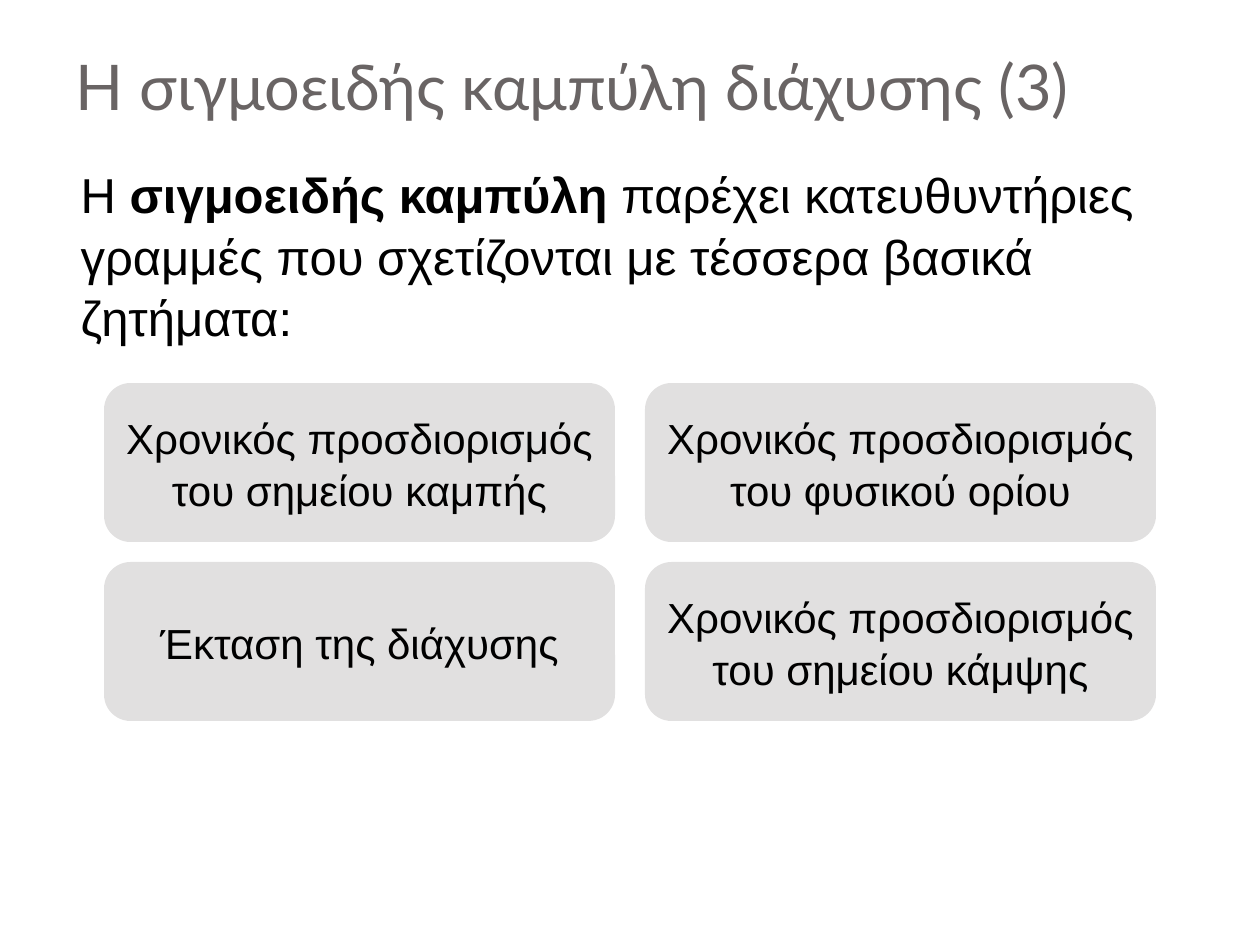
import pptx
import pptx.dml.color
import pptx.enum.shapes
import pptx.enum.text
import pptx.util
import lxml.etree

PX = 914400 / 126
COLORS = {"title": "696464", "text": "000000", "card": "E1E0E0"}
ANCHOR = pptx.enum.text.MSO_ANCHOR
ALIGN = pptx.enum.text.PP_ALIGN


def px(*lengths):
    return [pptx.util.Emu(round(length * PX)) for length in lengths]


def write(box, paragraphs, size, font="Arial", color="text", align=ALIGN.LEFT,
          anchor=ANCHOR.TOP, spacing=1.05, wrap=True):
    frame = box.text_frame
    frame.word_wrap = wrap
    frame.auto_size = pptx.enum.text.MSO_AUTO_SIZE.NONE
    frame.vertical_anchor = anchor
    for index, spans in enumerate(paragraphs):
        para = frame.paragraphs[0] if index == 0 else frame.add_paragraph()
        para.alignment = align
        para.line_spacing = spacing
        para.space_before = para.space_after = pptx.util.Pt(0)
        properties = para._p.get_or_add_pPr()
        properties.set("marL", "0")
        properties.set("indent", "0")
        lxml.etree.SubElement(properties, pptx.oxml.ns.qn("a:buNone"))
        for text, bold in spans:
            for number, line in enumerate(text.split("\n")):
                if number:
                    para.add_line_break()
                span = para.add_run()
                span.text = line
                span.font.name = font
                span.font.size = pptx.util.Pt(size)
                span.font.bold = bold
                span.font.color.rgb = pptx.dml.color.RGBColor.from_string(COLORS[color])


deck = pptx.Presentation()
deck.slide_width, deck.slide_height = px(1260, 945)
page = deck.slides.add_slide(deck.slide_layouts[1])

title = page.shapes.title
title.left, title.top, title.width, title.height = px(63, 47, 1134, 89)
title.text_frame.margin_bottom = pptx.util.Inches(0.1)
write(title, [[("Η σιγμοειδής καμπύλη διάχυσης (3)", False)]], size=36,
      font="Lato", color="title", anchor=ANCHOR.BOTTOM, spacing=1.0)

body = page.placeholders[1]
body.left, body.top, body.width, body.height = px(68, 155, 1142, 190)
write(body, [
    [("Η ", False), ("σιγμοειδής καμπύλη ", True),
     ("παρέχει κατευθυντήριες γραμμές που σχετίζονται με τέσσερα βασικά", False)],
    [("ζητήματα:", False)],
], size=28)

issues = [
    "Χρονικός προσδιορισμός\nτου σημείου καμπής",
    "Χρονικός προσδιορισμός\nτου φυσικού ορίου",
    "Έκταση της διάχυσης",
    "Χρονικός προσδιορισμός\nτου σημείου κάμψης",
]
for index, issue in enumerate(issues):
    row, column = divmod(index, 2)
    card = page.shapes.add_shape(
        pptx.enum.shapes.MSO_SHAPE.ROUNDED_RECTANGLE,
        *px(104 + column * 541, 383 + row * 179, 511, 159))
    card.shadow.inherit = False
    card.fill.solid()
    card.fill.fore_color.rgb = pptx.dml.color.RGBColor.from_string(COLORS["card"])
    card.line.fill.background()
    write(card, [[(issue, False)]], size=24, align=ALIGN.CENTER,
          anchor=ANCHOR.MIDDLE, wrap=False)

deck.save("out.pptx")
